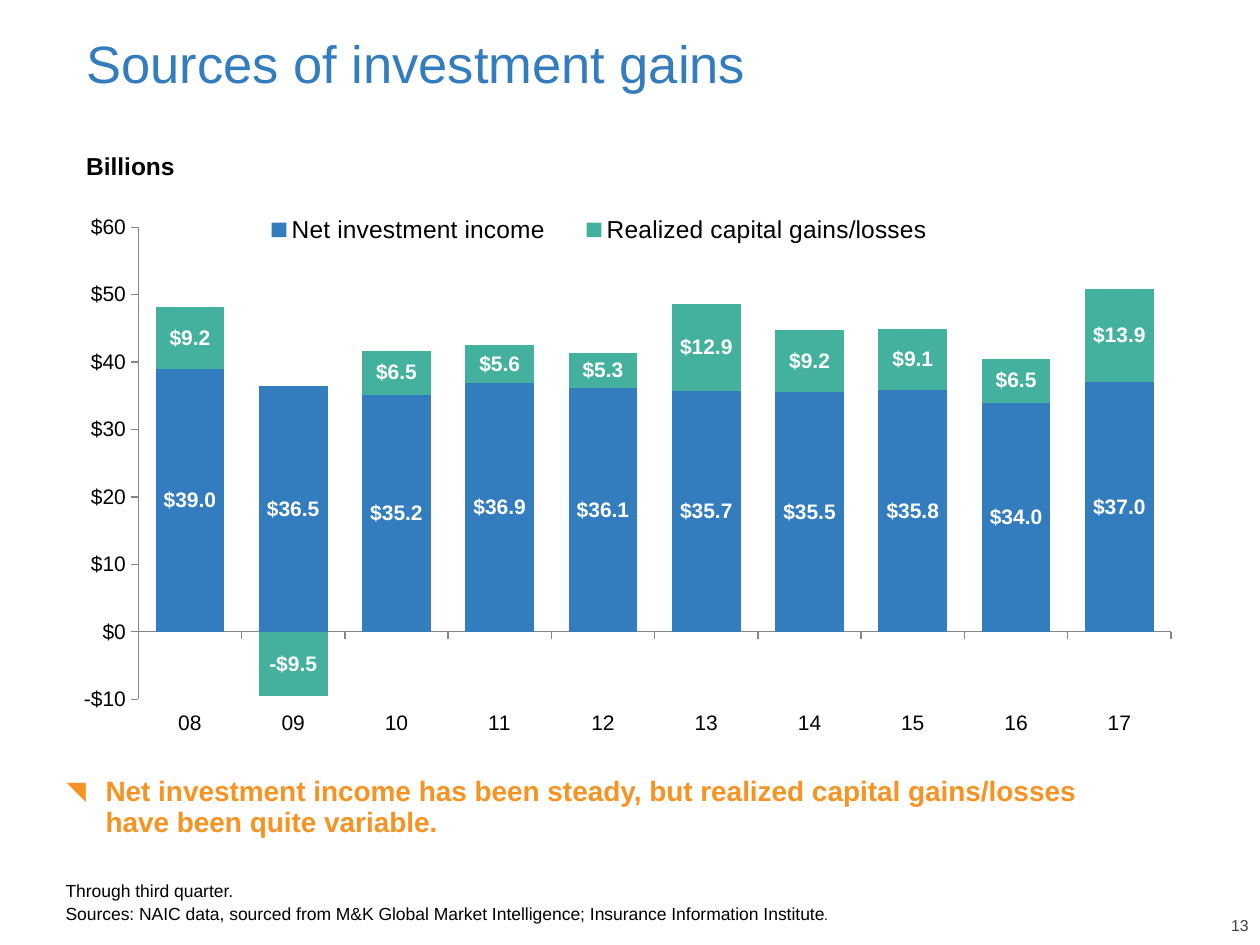
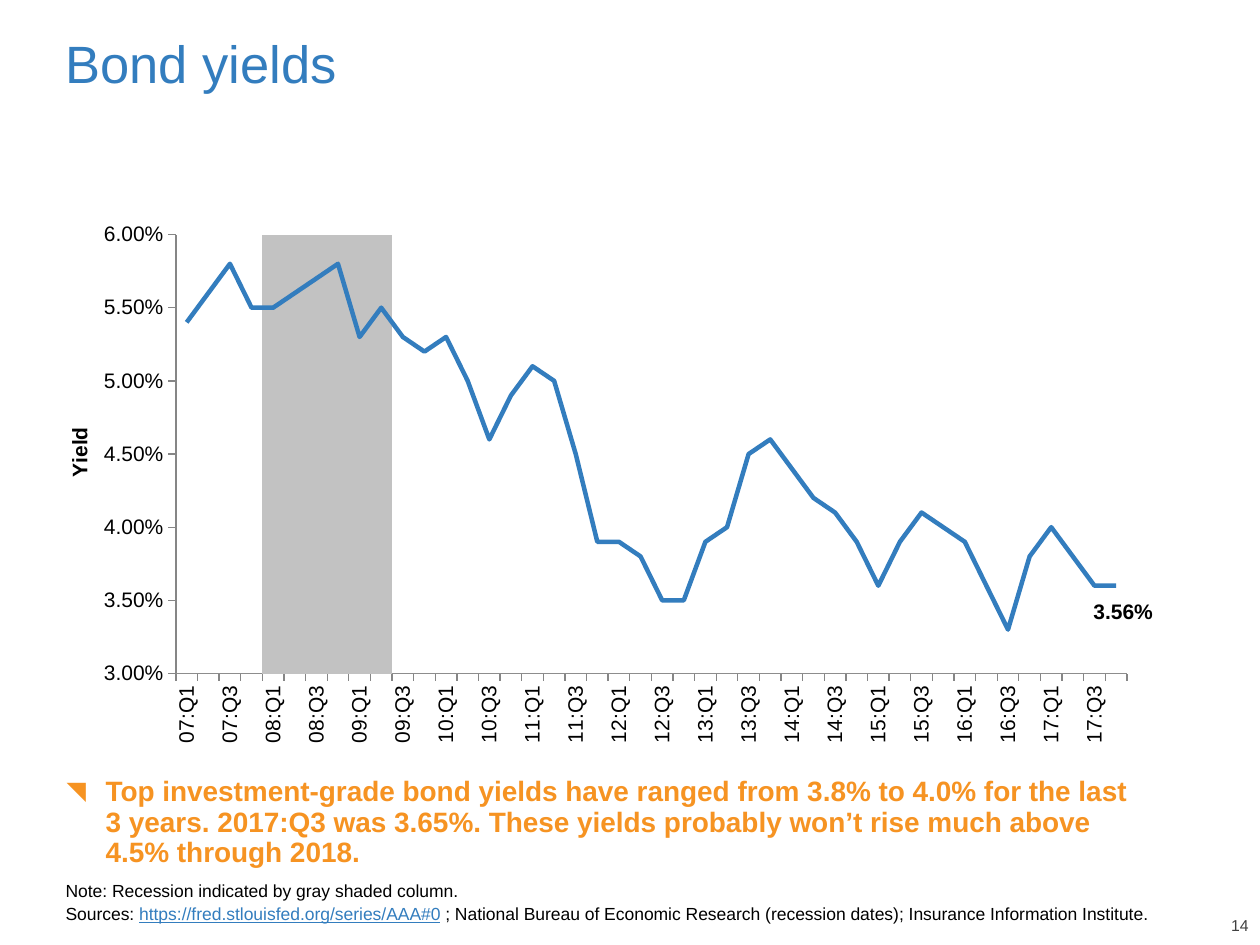
from dataclasses import dataclass

from pptx import Presentation
from pptx.chart.axis import ValueAxis
from pptx.chart.data import CategoryChartData
from pptx.dml.color import RGBColor
from pptx.enum.chart import (XL_CHART_TYPE, XL_LABEL_POSITION, XL_LEGEND_POSITION,
                             XL_MARKER_STYLE, XL_TICK_LABEL_POSITION, XL_TICK_MARK)
from pptx.enum.text import MSO_ANCHOR, MSO_AUTO_SIZE, PP_ALIGN
from pptx.oxml import parse_xml
from pptx.oxml.ns import nsdecls, qn
from pptx.util import Inches, Pt

TOP, MIDDLE, BOTTOM = MSO_ANCHOR.TOP, MSO_ANCHOR.MIDDLE, MSO_ANCHOR.BOTTOM
LEFT, RIGHT = PP_ALIGN.LEFT, PP_ALIGN.RIGHT
TICK_OUT, TICK_NONE = XL_TICK_MARK.OUTSIDE, XL_TICK_MARK.NONE
LABELS_LOW, LABELS_NONE = XL_TICK_LABEL_POSITION.LOW, XL_TICK_LABEL_POSITION.NONE

FONT = "Arial"
COLORS = {
    "blue": "337DBE", "green": "43B19E", "orange": "F69322", "black": "000000",
    "white": "FFFFFF", "number": "404040", "axis": "868686", "recession": "C2C2C2",
}
SLIDE_WIDTH, SLIDE_HEIGHT = Inches(10), Inches(7.5)
QUARTER_TURN = "-5400000"


@dataclass
class Box:
    """A region in percent of the slide's width and height."""
    left: float
    top: float
    width: float
    height: float

    def lengths(self):
        return (int(SLIDE_WIDTH * self.left / 100), int(SLIDE_HEIGHT * self.top / 100),
                int(SLIDE_WIDTH * self.width / 100), int(SLIDE_HEIGHT * self.height / 100))


NUMBER_BOX = Box(94.3, 97.2, 4.8, 1.73)
TAKEAWAY_BOX = Box(4.3, 81.65, 87.4, 10.13)
SOURCE_BOX = Box(4.2, 91.8, 92.5, 6)


def color(name):
    return RGBColor.from_string(COLORS[name])


def set_font(font, size, color_name="black", bold=False):
    font.name, font.size, font.bold = FONT, Pt(size), bold
    font.color.rgb = color(color_name)


# Text

def place(shape, box):
    shape.left, shape.top, shape.width, shape.height = box.lengths()


def prepare_frame(shape, anchor=TOP, insets=(0.1, 0.05)):
    frame = shape.text_frame
    frame.word_wrap = True
    frame.auto_size = MSO_AUTO_SIZE.NONE
    frame.vertical_anchor = anchor
    frame.margin_left = frame.margin_right = Inches(insets[0])
    frame.margin_top = frame.margin_bottom = Inches(insets[1])
    return frame


def format_paragraph(paragraph, size, color_name="black", bold=False, before=0, align=LEFT):
    paragraph.alignment = align
    paragraph.line_spacing = 0.9
    paragraph.space_before = Pt(before)
    set_font(paragraph.font, size, color_name, bold)


def set_bullet(paragraph, character=None, indent=0.0, color_name="orange"):
    properties = paragraph._p.get_or_add_pPr()
    properties.set("marL", str(Inches(indent)))
    properties.set("indent", str(-Inches(indent)))
    if character is None:
        parts = ["<a:buNone {}/>"]
    else:
        parts = [f'<a:buClr {{}}><a:srgbClr val="{COLORS[color_name]}"/></a:buClr>',
                 '<a:buSzPct {} val="90000"/>',
                 f'<a:buFont {{}} typeface="{FONT}"/>',
                 f'<a:buChar {{}} char="{character}"/>']
    for part in parts:
        properties.append(parse_xml(part.format(nsdecls("a"))))


def add_text(slide, box, text, size, anchor=TOP, insets=(0.1, 0.05), bullet=None, **style):
    shape = slide.shapes.add_textbox(*box.lengths())
    paragraph = prepare_frame(shape, anchor, insets).paragraphs[0]
    paragraph.text = text
    if bullet:
        set_bullet(paragraph, bullet, 0.31)
    format_paragraph(paragraph, size, **style)


def add_title(slide, box, text):
    title = slide.shapes.title
    place(title, box)
    paragraph = prepare_frame(title).paragraphs[0]
    paragraph.text = text
    format_paragraph(paragraph, 30, "blue")


def add_sources(slide, lines):
    """Each line is a list of (text, run style) pairs."""
    body = slide.placeholders[1]
    place(body, SOURCE_BOX)
    frame = prepare_frame(body, BOTTOM, (0.1, 0))
    for index, line in enumerate(lines):
        paragraph = frame.add_paragraph() if index else frame.paragraphs[0]
        set_bullet(paragraph)
        format_paragraph(paragraph, 10, before=2)
        for text, style in line:
            run = paragraph.add_run()
            run.text = text
            if "size" in style:
                run.font.size = Pt(style["size"])
            if "link_color" in style:
                run.font.color.rgb = color(style["link_color"])
                run.font.underline = True


def add_page(presentation, number, title, title_box, takeaway, sources):
    slide = presentation.slides.add_slide(presentation.slide_layouts[1])
    add_title(slide, title_box, title)
    add_sources(slide, sources)
    add_text(slide, TAKEAWAY_BOX, takeaway, 16, bullet="◥",
             color_name="orange", bold=True, before=6)
    add_text(slide, NUMBER_BOX, str(number), 9, BOTTOM, (0, 0),
             color_name="number", align=RIGHT)
    return slide


# Charts

def add_chart(slide, box, chart_type, categories, series):
    data = CategoryChartData()
    data.categories = categories
    for name, values in series:
        data.add_series(name, values)
    chart = slide.shapes.add_chart(chart_type, *box.lengths(), data).chart
    chart.has_title = chart.has_legend = False
    set_font(chart.font, 12)
    return chart


def set_layout(parent, x, y, width=None, height=None, inner=False, position=0):
    """Fix a chart part's place, in percent of the chart."""
    for old_layout in parent.findall(qn("c:layout")):
        position = parent.index(old_layout)
        parent.remove(old_layout)
    settings = [("layoutTarget", "inner")] if inner else []
    settings += [("xMode", "edge"), ("yMode", "edge")]
    settings += [(tag, round(share / 100, 4))
                 for tag, share in zip("xywh", (x, y, width, height)) if share is not None]
    parts = "".join(f'<c:{tag} val="{value}"/>' for tag, value in settings)
    parent.insert(position, parse_xml(
        f"<c:layout {nsdecls('c')}><c:manualLayout>{parts}</c:manualLayout></c:layout>"))


def format_axis(axis):
    axis.has_major_gridlines = False
    axis.major_tick_mark, axis.minor_tick_mark = TICK_OUT, TICK_NONE
    axis.format.line.color.rgb = color("axis")
    axis.format.line.width = Pt(0.75)
    set_font(axis.tick_labels.font, 12)


def set_scale(axis, minimum, maximum, step, number_format):
    axis.minimum_scale, axis.maximum_scale, axis.major_unit = minimum, maximum, step
    axis.tick_labels.number_format = number_format
    axis.tick_labels.number_format_is_linked = False


def fill_series(series, color_name):
    series.invert_if_negative = False
    series.format.fill.solid()
    series.format.fill.fore_color.rgb = color(color_name)


def add_gains_chart(slide, box):
    years = [f"{year:02d}" for year in range(8, 18)]
    income = [39, 36.5, 35.2, 36.9, 36.1, 35.7, 35.5, 35.8, 34, 37]
    gains = [9.2, -9.5, 6.5, 5.6, 5.3, 12.9, 9.2, 9.1, 6.5, 13.9]
    chart = add_chart(slide, box, XL_CHART_TYPE.COLUMN_STACKED, years,
                      [("Net investment income", income),
                       ("Realized capital gains/losses", gains)])
    set_layout(chart.element.xpath(".//c:plotArea")[0], 10.8, 2.8, 88.7, 84.2, inner=True)
    for axis in (chart.category_axis, chart.value_axis):
        format_axis(axis)
    chart.category_axis.tick_label_position = LABELS_LOW
    set_scale(chart.value_axis, -10, 60, 10, '"$"#,##0')

    plot = chart.plots[0]
    plot.gap_width, plot.overlap, plot.vary_by_categories = 50, 100, False
    for series, color_name in zip(plot.series, ("blue", "green")):
        fill_series(series, color_name)
        labels = series.data_labels
        labels.show_value = True
        labels.position = XL_LABEL_POSITION.CENTER
        labels.number_format = '"$"#,##0.0'
        labels.number_format_is_linked = False
        set_font(labels.font, 12, "white", bold=True)

    chart.has_legend = True
    chart.legend.position = XL_LEGEND_POSITION.TOP
    chart.legend.include_in_layout = False
    set_font(chart.legend.font, 14)
    set_layout(chart.element.xpath(".//c:legend")[0], 19.4, 0, 62, 6.5, position=1)


def move_to_second_axis(chart):
    """Turn the last column series into a line with its own value axis."""
    column_chart = chart.element.xpath(".//c:barChart")[0]
    series = column_chart.findall(qn("c:ser"))[-1]
    for flag in series.findall(qn("c:invertIfNegative")):
        series.remove(flag)
    line_chart = parse_xml(
        f'<c:lineChart {nsdecls("c")}><c:grouping val="standard"/><c:varyColors val="0"/>'
        '<c:marker val="1"/><c:axId val="5001"/><c:axId val="5002"/></c:lineChart>')
    line_chart.insert(2, series)
    column_chart.addnext(line_chart)

    def new_axis(tag, own, other, side, hidden, ending):
        return parse_xml(
            f'<c:{tag} {nsdecls("c")}><c:axId val="{own}"/>'
            '<c:scaling><c:orientation val="minMax"/></c:scaling>'
            f'<c:delete val="{hidden}"/><c:axPos val="{side}"/>'
            f'<c:tickLblPos val="nextTo"/><c:crossAx val="{other}"/>'
            f'<c:crosses val="min"/>{ending}</c:{tag}>')

    value_axis = new_axis("valAx", 5002, 5001, "l", 0, '<c:crossBetween val="between"/>')
    category_axis = new_axis("catAx", 5001, 5002, "b", 1, "")
    chart.element.xpath(".//c:valAx")[0].addnext(value_axis)
    value_axis.addnext(category_axis)
    return ValueAxis(value_axis)


def add_yield_chart(slide, box):
    percents = [5.4, 5.6, 5.8, 5.5, 5.5, 5.6, 5.7, 5.8, 5.3, 5.5, 5.3, 5.2, 5.3, 5.0, 4.6,
                4.9, 5.1, 5.0, 4.5, 3.9, 3.9, 3.8, 3.5, 3.5, 3.9, 4.0, 4.5, 4.6, 4.4, 4.2,
                4.1, 3.9, 3.6, 3.9, 4.1, 4.0, 3.9, 3.6, 3.3, 3.8, 4.0, 3.8, 3.6, 3.6]
    quarters = [f"{7 + index // 4:02d}:Q{index % 4 + 1}" for index in range(len(percents))]
    recession = [100 if "08:Q1" <= quarter <= "09:Q2" else 0 for quarter in quarters]
    chart = add_chart(slide, box, XL_CHART_TYPE.COLUMN_CLUSTERED, quarters,
                      [("Recession", recession),
                       ("Yield", [round(percent / 100, 3) for percent in percents])])
    hidden_axis = chart.value_axis
    yield_axis = move_to_second_axis(chart)
    set_layout(chart.element.xpath(".//c:plotArea")[0], 11, 4.5, 88.7, 81.6, inner=True)

    # Recession columns fill the full height of a hidden scale
    columns, lines = chart.plots
    columns.gap_width, columns.vary_by_categories = 0, False
    fill_series(columns.series[0], "recession")
    hidden_axis.has_major_gridlines = False
    set_scale(hidden_axis, 0, 100, 100, "0")
    hidden_axis.major_tick_mark = hidden_axis.minor_tick_mark = TICK_NONE
    hidden_axis.tick_label_position = LABELS_NONE
    hidden_axis.format.line.fill.background()

    # Yield line
    line = lines.series[0]
    line.smooth = False
    line.marker.style = XL_MARKER_STYLE.NONE
    line.format.line.color.rgb = color("blue")
    line.format.line.width = Pt(2.58)

    # Visible axes
    for axis in (chart.category_axis, yield_axis):
        format_axis(axis)
    set_scale(yield_axis, 0.03, 0.06, 0.005, "0.00%")
    chart.element.xpath(".//c:catAx//a:bodyPr")[0].set("rot", QUARTER_TURN)
    chart.element.xpath(".//c:catAx/c:noMultiLvlLbl")[0].addprevious(
        parse_xml(f'<c:tickLblSkip {nsdecls("c")} val="2"/>'))
    title = yield_axis.axis_title
    title.text_frame.text = "Yield"
    set_font(title.text_frame.paragraphs[0].font, 12, bold=True)
    title.element.xpath(".//a:bodyPr")[0].set("rot", QUARTER_TURN)
    set_layout(title.element, 0.45, 39.6)


# Slides

def build_gains_slide(presentation):
    slide = add_page(
        presentation, 13, "Sources of investment gains", Box(5.85, 3.33, 90.9, 8.8),
        "Net investment income has been steady, but realized capital gains/losses "
        "have been quite variable.",
        [[("Through third quarter.", {})],
         [("Sources: NAIC data, sourced from M&K Global Market Intelligence; "
           "Insurance Information Institute", {}), (".", {"size": 8})]])
    add_gains_chart(slide, Box(1, 22.4, 92.4, 59.33))
    add_text(slide, Box(5.85, 15.65, 11.5, 4.13), "Billions", 14, MIDDLE, bold=True)


def build_yields_slide(presentation):
    slide = add_page(
        presentation, 14, "Bond yields", Box(4.2, 3.33, 92.5, 13.87),
        "Top investment-grade bond yields have ranged from 3.8% to 4.0% for the last "
        "3 years. 2017:Q3 was 3.65%. These yields probably won’t rise much above "
        "4.5% through 2018.",
        [[("Note: Recession indicated by gray shaded column.", {})],
         [("Sources: ", {}),
          ("https://fred.stlouisfed.org/series/AAA#0", {"link_color": "blue"}),
          (" ; National Bureau of Economic Research (recession dates); "
           "Insurance Information Institute.", {})]])
    add_yield_chart(slide, Box(4.6, 22.27, 85.1, 56.93))
    add_text(slide, Box(85.8, 62.93, 7.9, 4.27), "3.56%", 12, bold=True)


def main():
    presentation = Presentation()
    presentation.slide_width, presentation.slide_height = SLIDE_WIDTH, SLIDE_HEIGHT
    build_gains_slide(presentation)
    build_yields_slide(presentation)
    presentation.save("out.pptx")


if __name__ == "__main__":
    main()
